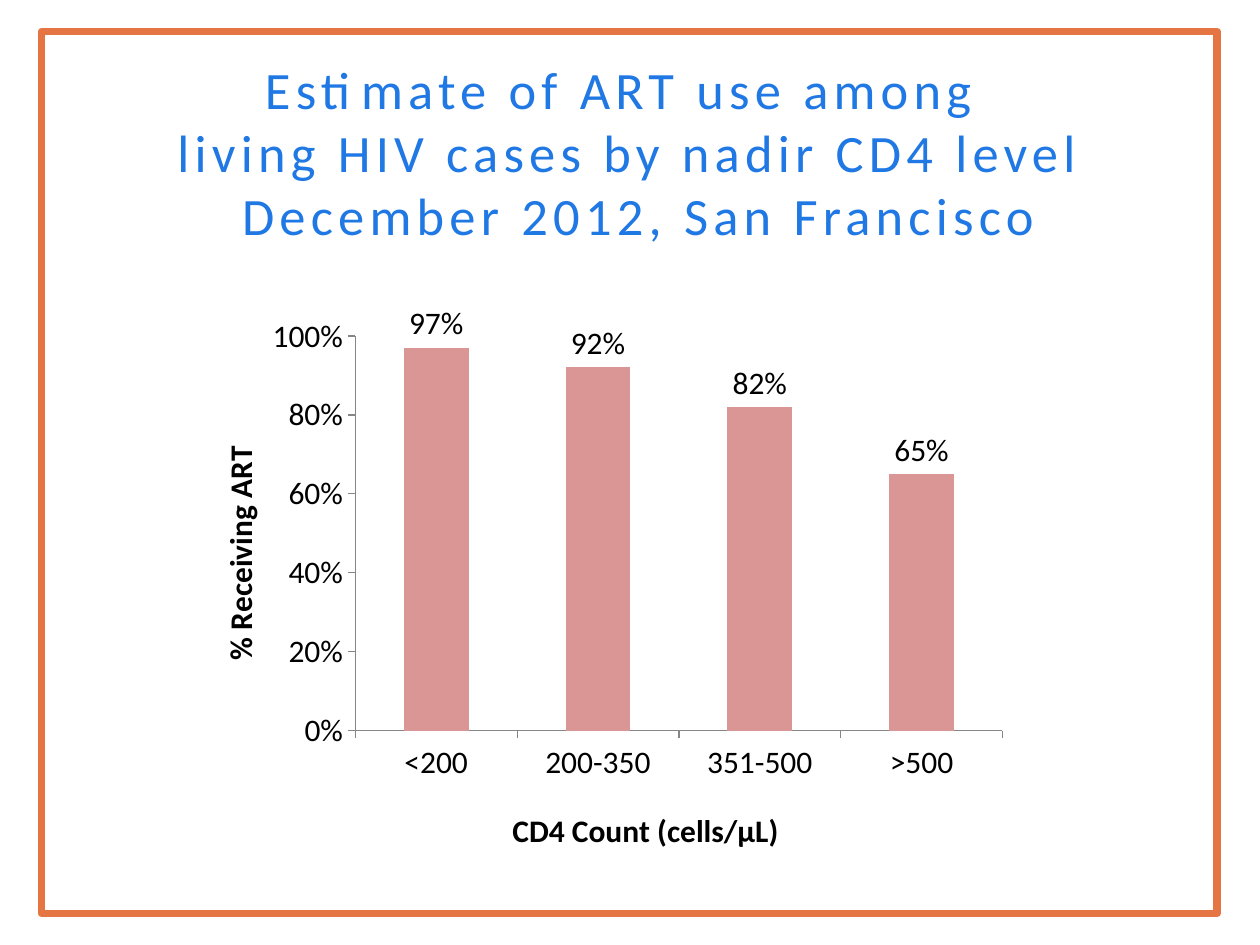
"""Build a slide with a column chart of ART use by nadir CD4 level."""
from lxml import etree
from pptx import Presentation
from pptx.chart.data import CategoryChartData
from pptx.dml.color import RGBColor
from pptx.enum.chart import XL_CHART_TYPE, XL_LABEL_POSITION, XL_TICK_MARK
from pptx.enum.shapes import MSO_SHAPE
from pptx.enum.text import MSO_ANCHOR, PP_ALIGN
from pptx.oxml.ns import qn
from pptx.util import Inches, Pt

TITLE = ("Estimate of ART use among \v"
         "living HIV cases by nadir CD4 level\v"
         " December 2012, San Francisco")
ART_USE = {"<200": 0.97, "200-350": 0.92, "351-500": 0.82, ">500": 0.65}
X_TITLE = "CD4 Count (cells/µL)"
Y_TITLE = "% Receiving ART"

FONT = "Calibri"
ORANGE = RGBColor(0xE5, 0x75, 0x43)
BLUE = RGBColor(0x1F, 0x78, 0xE3)
PINK = RGBColor(0xD9, 0x96, 0x94)
BLACK = RGBColor(0, 0, 0)
GRAY = RGBColor(0x86, 0x86, 0x86)
COLUMN = XL_CHART_TYPE.COLUMN_CLUSTERED
OUTSIDE_END = XL_LABEL_POSITION.OUTSIDE_END
TICK_OUT = XL_TICK_MARK.OUTSIDE


def style_font(font, size, color, bold=False):
    font.name, font.size, font.bold = FONT, Pt(size), bold
    font.color.rgb = color


def place(parent, index, **fractions):
    for old in parent.findall(qn("c:layout")):
        parent.remove(old)
    layout = etree.Element(qn("c:layout"))
    parent.insert(index, layout)
    manual = etree.SubElement(layout, qn("c:manualLayout"))
    if "w" in fractions:
        etree.SubElement(manual, qn("c:layoutTarget"), val="inner")
    for key in ("x", "y"):
        etree.SubElement(manual, qn(f"c:{key}Mode"), val="edge")
    for key, value in fractions.items():
        etree.SubElement(manual, qn(f"c:{key}"), val=str(value))


def style_axis(axis, title, x, y):
    axis.has_major_gridlines = False
    axis.major_tick_mark = TICK_OUT
    axis.format.line.color.rgb = GRAY
    axis.format.line.width = Pt(0.75)
    tf = axis.axis_title.text_frame
    tf.text = title
    style_font(tf.paragraphs[0].font, 18, BLACK, bold=True)
    place(axis.axis_title._element, 1, x=x, y=y)


def add_frame(s):
    frame = s.shapes.add_shape(MSO_SHAPE.RECTANGLE, Inches(0.33), Inches(0.25),
                               Inches(9.33), Inches(7))
    frame.shadow.inherit = False
    frame.fill.background()
    frame.line.color.rgb = ORANGE
    frame.line.width = Pt(4.25)


def add_title(s):
    sp = s.shapes.title
    sp.left, sp.top, sp.width, sp.height = map(Inches, (0.5, 0.58, 9, 1.25))
    tf = sp.text_frame
    tf.text = TITLE
    tf.vertical_anchor = MSO_ANCHOR.MIDDLE
    p = tf.paragraphs[0]
    p.alignment = PP_ALIGN.CENTER
    style_font(p.font, 30, BLUE)
    for r in p.runs:
        r.font._element.set("spc", "300")


def add_art_chart(s):
    data = CategoryChartData(number_format="0%")
    data.categories = list(ART_USE)
    data.add_series("Series 1", list(ART_USE.values()))
    chart = s.shapes.add_chart(COLUMN, Inches(1.42), Inches(2.42),
                               Inches(6.67), Inches(4.44), data).chart
    style_font(chart.font, 18, BLACK)
    chart.has_legend = False
    chart.has_title = False

    plot = chart.plots[0]
    plot.vary_by_categories = False
    plot.gap_width = 150
    fill = plot.series[0].format.fill
    fill.solid()
    fill.fore_color.rgb = PINK
    plot.has_data_labels = True
    labels = plot.data_labels
    labels.show_value = True
    labels.number_format = "0%"
    labels.number_format_is_linked = False
    labels.position = OUTSIDE_END

    style_axis(chart.category_axis, X_TITLE, 0.39, 0.89)
    values = chart.value_axis
    style_axis(values, Y_TITLE, 0.04, 0.24)
    values.minimum_scale, values.maximum_scale = 0, 1
    values.major_unit = 0.2
    values.tick_labels.number_format = "0%"
    values.tick_labels.number_format_is_linked = False
    plot_area = chart._chartSpace.find(".//" + qn("c:plotArea"))
    place(plot_area, 0, x=0.21, y=0.05, w=0.77, h=0.71)


def main():
    prs = Presentation()
    prs.slide_width, prs.slide_height = Inches(10), Inches(7.5)
    s = prs.slides.add_slide(prs.slide_layouts[5])
    add_frame(s)
    add_title(s)
    add_art_chart(s)
    prs.save("out.pptx")


if __name__ == "__main__":
    main()
